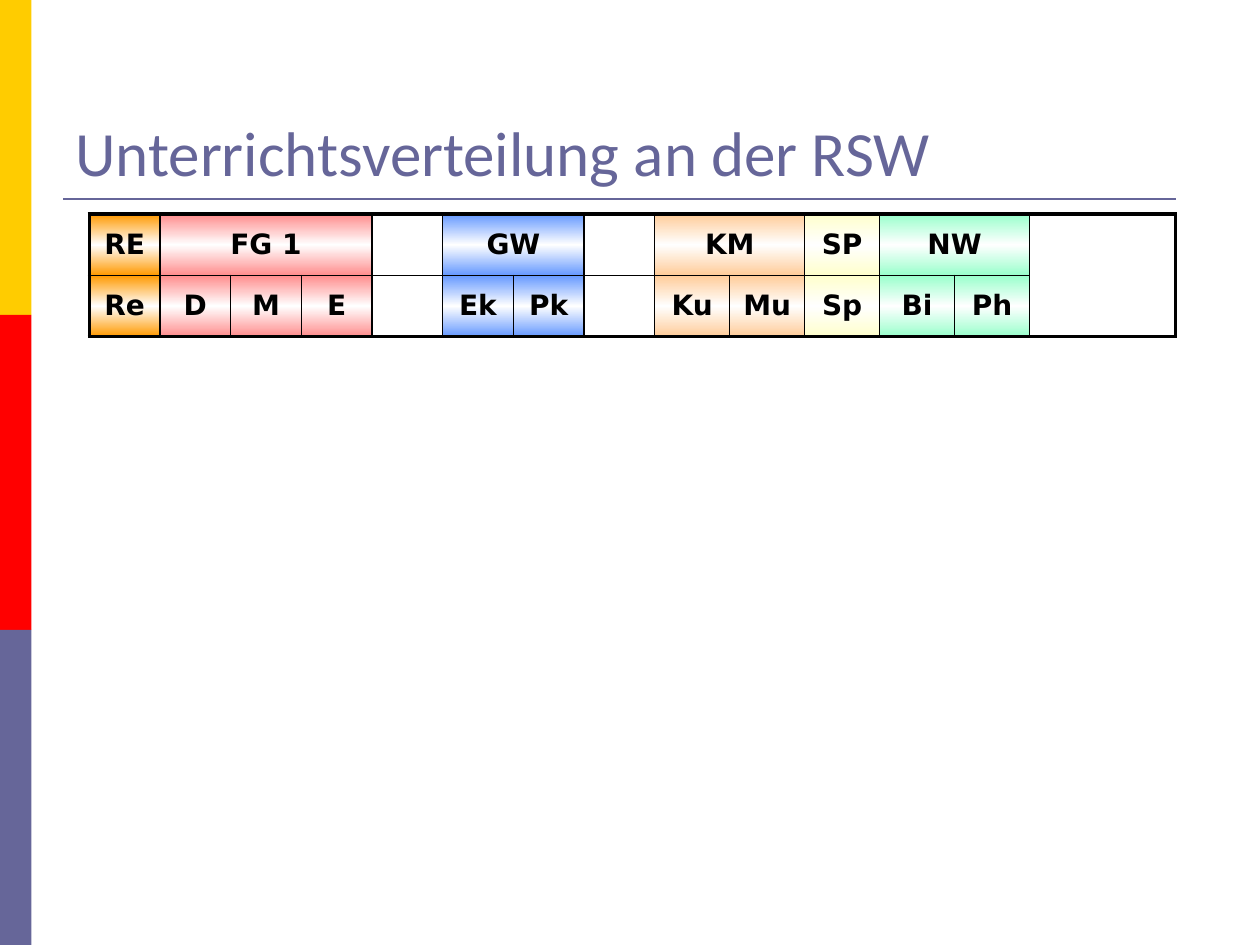
import dataclasses

import pptx
import pptx.dml.color
import pptx.enum.shapes
import pptx.enum.text
import pptx.oxml.ns
import pptx.util
from lxml import etree

Pt = pptx.util.Pt
qn = pptx.oxml.ns.qn


@dataclasses.dataclass(frozen=True)
class Theme:
    accent: str = "666699"
    yellow: str = "FFCC00"
    red: str = "FF0000"
    black: str = "000000"
    white: str = "FFFFFF"
    title_font: str = "Calibri"
    title_size: float = 36
    cell_font: str = "DejaVu Sans"
    cell_size: float = 16
    outer_border: float = 2.25
    inner_border: float = 1


THEME = Theme()
NO_TABLE_STYLE = "{2D5ABB26-0587-4C30-8999-92F81FD0307C}"

# Learning area, its colour, and its subjects; None leaves a gap
AREAS = [
    ("RE", "FF9900", ["Re"]),
    ("FG 1", "FF8D8D", ["D", "M", "E"]),
    ("", None, [""]),
    ("GW", "6699FF", ["Ek", "Pk"]),
    ("", None, [""]),
    ("KM", "FFCC99", ["Ku", "Mu"]),
    ("SP", "FFFFCC", ["Sp"]),
    ("NW", "99FFCC", ["Bi", "Ph"]),
    ("", None, [""]),
]
COLUMN_WIDTHS = [40.4] * 8 + [42.85] * 5 + [83.5]
ROW_HEIGHT = 35


def rgb(color):
    return pptx.dml.color.RGBColor.from_string(color)


def add_run(paragraph, text, font, size, color, bold=False):
    run = paragraph.add_run()
    run.text = text
    run.font.name = font
    run.font.size = Pt(size)
    run.font.bold = bold
    run.font.color.rgb = rgb(color)


def add_side_bars(slide):
    for i, color in enumerate([THEME.yellow, THEME.red, THEME.accent]):
        bar = slide.shapes.add_shape(
            pptx.enum.shapes.MSO_SHAPE.RECTANGLE, Pt(0), Pt(180 * i), Pt(18), Pt(180))
        bar.shadow.inherit = False
        bar.fill.solid()
        bar.fill.fore_color.rgb = rgb(color)
        bar.line.fill.background()


def add_title(slide, text):
    title = slide.shapes.add_textbox(Pt(36), Pt(21.6), Pt(648), Pt(90))
    frame = title.text_frame
    frame.word_wrap = True
    frame.vertical_anchor = pptx.enum.text.MSO_ANCHOR.BOTTOM
    add_run(frame.paragraphs[0], text, THEME.title_font, THEME.title_size, THEME.accent)


def add_title_rule(slide):
    rule = slide.shapes.add_connector(
        pptx.enum.shapes.MSO_CONNECTOR.STRAIGHT, Pt(36), Pt(113.8), Pt(672), Pt(113.8))
    rule.line.color.rgb = rgb(THEME.accent)
    rule.line.width = Pt(1.5)
    etree.SubElement(rule.element.spPr, qn("a:effectLst"))


def set_borders(cell, **widths):
    """Draw the given sides (L, R, T, B); must come before the fill."""
    properties = cell._tc.get_or_add_tcPr()
    for side in "LRTB":
        if widths.get(side):
            line = etree.SubElement(
                properties, qn("a:ln" + side), w=str(Pt(widths[side])))
            fill = etree.SubElement(line, qn("a:solidFill"))
            etree.SubElement(fill, qn("a:srgbClr"), val=THEME.black)


def set_fill(cell, color):
    """Fade vertically from the colour to white and back."""
    if color is None:
        cell.fill.background()
        return
    gradient = etree.SubElement(cell._tc.get_or_add_tcPr(), qn("a:gradFill"))
    stops = etree.SubElement(gradient, qn("a:gsLst"))
    for percent, stop_color in [(0, color), (50, THEME.white), (100, color)]:
        stop = etree.SubElement(stops, qn("a:gs"), pos=str(percent * 1000))
        etree.SubElement(stop, qn("a:srgbClr"), val=stop_color)
    etree.SubElement(gradient, qn("a:lin"), ang="5400000", scaled="1")


def write_cell(cell, text, color):
    set_fill(cell, color)
    cell.vertical_anchor = pptx.enum.text.MSO_ANCHOR.MIDDLE
    if text:
        paragraph = cell.text_frame.paragraphs[0]
        paragraph.alignment = pptx.enum.text.PP_ALIGN.CENTER
        paragraph.space_before = Pt(0.2 * THEME.cell_size)
        add_run(paragraph, text, THEME.cell_font, THEME.cell_size, THEME.black, bold=True)


def add_subject_table(slide):
    count = len(COLUMN_WIDTHS)
    table = slide.shapes.add_table(
        2, count, Pt(51), Pt(122.4), Pt(sum(COLUMN_WIDTHS)), Pt(2 * ROW_HEIGHT)).table
    table.first_row = table.horz_banding = False
    table._tbl.tblPr.find(qn("a:tableStyleId")).text = NO_TABLE_STYLE
    for column, width in zip(table.columns, COLUMN_WIDTHS):
        column.width = Pt(width)
    for row in table.rows:
        row.height = Pt(ROW_HEIGHT)

    outer, inner = THEME.outer_border, THEME.inner_border
    start = 0
    for area, color, subjects in AREAS:
        end = start + len(subjects) - 1
        # The last column stays open between the two rows
        middle = None if end == count - 1 else inner
        left = outer if start == 0 else inner
        right = outer if end == count - 1 else inner

        # Upper row: one cell for the whole area
        area_cell = table.cell(0, start)
        if end > start:
            area_cell.merge(table.cell(0, end))
        set_borders(area_cell, L=left, R=right, T=outer, B=middle)
        for i in range(start + 1, end + 1):
            set_borders(table.cell(0, i), R=right if i == end else None,
                        T=outer, B=middle)
        write_cell(area_cell, area, color)

        # Lower row: one cell for each subject
        for i, subject in enumerate(subjects, start):
            subject_cell = table.cell(1, i)
            set_borders(subject_cell, L=left if i == start else inner,
                        R=right if i == end else inner, T=middle, B=outer)
            write_cell(subject_cell, subject, color)
        start = end + 1


def main():
    deck = pptx.Presentation()
    deck.slide_width, deck.slide_height = Pt(720), Pt(540)
    slide = deck.slides.add_slide(deck.slide_layouts[6])
    slide.background.fill.solid()
    slide.background.fill.fore_color.rgb = rgb(THEME.white)

    add_side_bars(slide)
    add_title_rule(slide)
    add_title(slide, "Unterrichtsverteilung an der RSW")
    add_subject_table(slide)
    deck.save("out.pptx")


if __name__ == "__main__":
    main()
